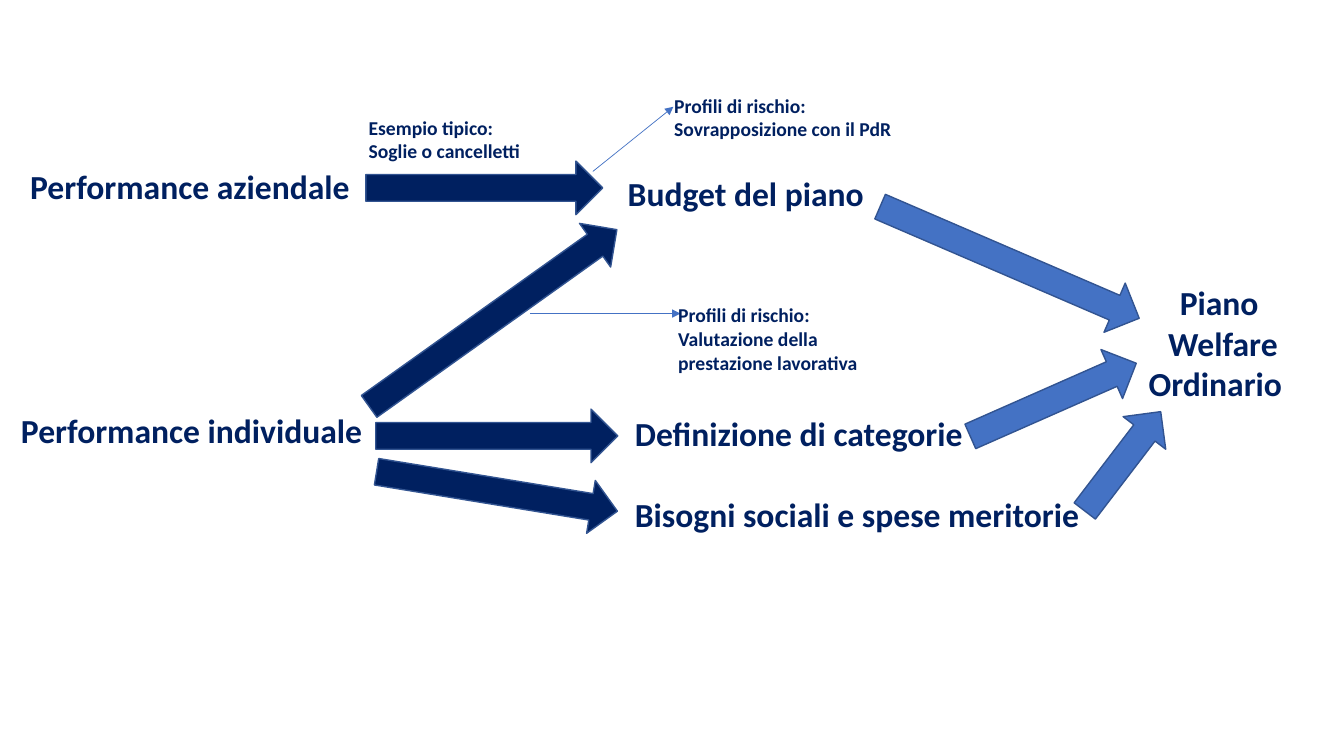
import pptx
import pptx.dml.color
import pptx.enum.shapes
import pptx.enum.text
import pptx.oxml
import pptx.oxml.ns
import pptx.util
from dataclasses import dataclass

Cm = pptx.util.Cm
Pt = pptx.util.Pt
RGB = pptx.dml.color.RGBColor.from_string
Align = pptx.enum.text.PP_ALIGN


@dataclass(frozen=True)
class Theme:
    navy: str = "002060"
    blue: str = "4472C4"
    outline: str = "325491"
    font: str = "Calibri"
    step_size: int = 24
    note_size: int = 14


theme = Theme()

presentation = pptx.Presentation()
presentation.slide_width = Cm(33.87)
presentation.slide_height = Cm(19.05)
slide = presentation.slides.add_slide(presentation.slide_layouts[6])


def add_label(text, left, top, width, height, size, align=Align.LEFT):
    label = slide.shapes.add_textbox(Cm(left), Cm(top), Cm(width), Cm(height))
    frame = label.text_frame
    frame.word_wrap = True
    frame.auto_size = pptx.enum.text.MSO_AUTO_SIZE.SHAPE_TO_FIT_TEXT
    frame.text = text
    for paragraph in frame.paragraphs:
        paragraph.alignment = align
        for run in paragraph.runs:
            run.font.name = theme.font
            run.font.size = Pt(size)
            run.font.bold = True
            run.font.color.rgb = RGB(theme.navy)


# Block arrows: left, top, length, rotation, colour
arrow_thickness = 1.35
flows = [
    (9.22, 4.06, 5.97, 0, theme.navy),
    (8.59, 7.34, 7.67, -35.5, theme.navy),
    (9.47, 10.31, 6.10, 0, theme.navy),
    (9.45, 11.71, 6.15, 9.3, theme.navy),
    (21.89, 5.94, 7.11, 23.3, theme.blue),
    (24.26, 9.40, 4.57, -23.8, theme.blue),
    (26.72, 10.95, 3.15, -52.6, theme.blue),
]
for left, top, length, rotation, colour in flows:
    flow = slide.shapes.add_shape(
        pptx.enum.shapes.MSO_SHAPE.RIGHT_ARROW,
        Cm(left), Cm(top), Cm(length), Cm(arrow_thickness))
    flow.rotation = rotation
    flow.shadow.inherit = False
    flow.fill.solid()
    flow.fill.fore_color.rgb = RGB(colour)
    flow.line.color.rgb = RGB(theme.outline)
    flow.line.width = Pt(1)

# Steps of the plan: text, left, top, width
steps = [
    ("Performance aziendale", 0.51, 4.06, 8.71),
    ("Performance individuale", 0.28, 10.21, 9.19),
    ("Budget del piano", 15.57, 4.24, 6.73),
    ("Definizione di categorie", 15.75, 10.29, 9.12),
    ("Bisogni sociali e spese meritorie", 15.75, 12.32, 11.76),
]
for text, left, top, width in steps:
    add_label(text, left, top, width, 1.27, theme.step_size)

# Resulting plan
add_label("Piano \nWelfare\nOrdinario  ", 28.65, 6.99, 4.34, 3.33,
          theme.step_size, Align.CENTER)

# Thin pointers to the risk notes
pointers = [(14.94, 4.32, 16.97, 2.69), (13.36, 7.90, 17.15, 7.90)]
for start_x, start_y, end_x, end_y in pointers:
    pointer = slide.shapes.add_connector(
        pptx.enum.shapes.MSO_CONNECTOR.STRAIGHT,
        Cm(start_x), Cm(start_y), Cm(end_x), Cm(end_y))
    pointer.line.color.rgb = RGB(theme.blue)
    pointer.line.width = Pt(0.5)
    line_xml = pointer.line._get_or_add_ln()
    line_xml.append(pptx.oxml.parse_xml(
        f'<a:tailEnd {pptx.oxml.ns.nsdecls("a")} type="triangle"/>'))
    line_xml.addnext(pptx.oxml.parse_xml(
        f'<a:effectLst {pptx.oxml.ns.nsdecls("a")}/>'))

# Notes: text, left, top, width, height
notes = [
    ("Esempio tipico:\nSoglie o cancelletti", 9.04, 2.79, 6.38, 1.44),
    ("Profili di rischio:\nSovrapposizione con il PdR", 16.74, 2.24, 6.38, 1.44),
    ("Profili di rischio:\nValutazione della\nprestazione lavorativa",
     16.84, 7.52, 5.08, 2.06),
]
for text, left, top, width, height in notes:
    add_label(text, left, top, width, height, theme.note_size)

presentation.save("out.pptx")
